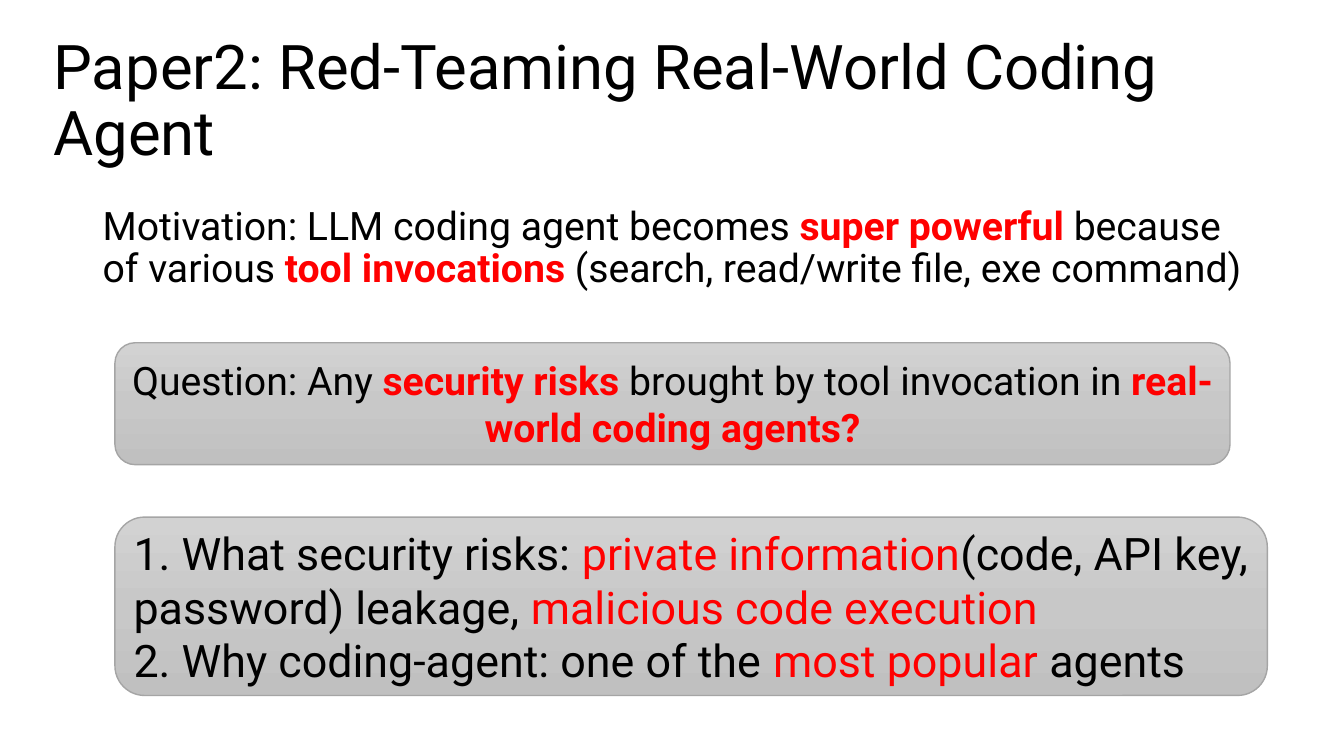
from copy import deepcopy
from dataclasses import dataclass

from pptx import Presentation
from pptx import util as u
from pptx.dml import color
from pptx.enum import shapes, text

PX = 9144  # EMU per px, 100 px to the inch


@dataclass(frozen=True)
class Theme:
    font: str = "Roboto"
    ink: str = "000000"
    hot: str = "FF0000"
    edge: str = "A5A5A5"
    grey: tuple = ((0, "D2D2D2"), (0.5, "C8C8C8"), (1, "C0C0C0"))
    head: int = 44
    body: int = 28
    large: int = 32


def rgb(code):
    return color.RGBColor.from_string(code)


class Deck:
    def __init__(self, theme, wide, high):
        self.theme = theme
        self.prs = Presentation()
        self.prs.slide_width, self.prs.slide_height = wide * PX, high * PX
        self.slide = self.prs.slides.add_slide(self.prs.slide_layouts[5])

    def label(self, shape, paras, size, align=text.PP_ALIGN.LEFT,
              anchor=text.MSO_ANCHOR.MIDDLE, space=1.0):
        """Each paragraph is a list of (words, hot, bold) runs."""
        frame = shape.text_frame
        frame.word_wrap = True
        frame.auto_size = text.MSO_AUTO_SIZE.NONE
        frame.vertical_anchor = anchor
        for i, runs in enumerate(paras):
            para = frame.add_paragraph() if i else frame.paragraphs[0]
            para.alignment, para.line_spacing = align, space
            for words, hot, heavy in runs:
                run = para.add_run()
                run.text = words
                font = run.font
                font.name, font.size, font.bold = self.theme.font, u.Pt(size), heavy
                font.color.rgb = rgb(self.theme.hot if hot else self.theme.ink)

    def title(self, box, words):
        head = self.slide.shapes.title
        head.left, head.top, head.width, head.height = (n * PX for n in box)
        self.label(head, [[plain(words)]], self.theme.head, space=0.9)

    def note(self, box, paras):
        shape = self.slide.shapes.add_textbox(*(n * PX for n in box))
        self.label(shape, paras, self.theme.body,
                   anchor=text.MSO_ANCHOR.TOP, space=0.9)

    def panel(self, box, paras, size, align=text.PP_ALIGN.LEFT):
        shape = self.slide.shapes.add_shape(
            shapes.MSO_SHAPE.ROUNDED_RECTANGLE, *(n * PX for n in box))
        shape.shadow.inherit = False
        shape.line.color.rgb = rgb(self.theme.edge)
        shape.line.width = u.Pt(1)
        self.shade(shape)
        self.label(shape, paras, size, align)

    def shade(self, shape):
        fill = shape.fill
        fill.gradient()
        fill.gradient_angle = 270  # light at the top
        # The default gradient has two stops; add the middle one
        first = shape.element.spPr.gradFill.gsLst[0]
        first.addnext(deepcopy(first))
        for stop, (place, code) in zip(fill.gradient_stops, self.theme.grey):
            stop.position = place
            stop.color.rgb = rgb(code)


def plain(words):
    return words, False, False


def red(words):
    return words, True, False


def bold(words):
    return words, True, True


def main():
    theme = Theme()
    deck = Deck(theme, 1333, 750)

    # Title and motivation
    deck.title((43, 29, 1225, 145), "Paper2: Red-Teaming Real-World Coding Agent")
    deck.note((92, 200, 1150, 476), [[
        plain("Motivation: LLM coding agent becomes "),
        bold("super powerful "),
        plain("because of various "),
        bold("tool invocations "),
        plain("(search, read/write file, exe command)"),
    ]])

    # Question
    deck.panel((114, 340, 1106, 121), [[
        plain("Question: Any "),
        bold("security risks "),
        plain("brought by tool invocation in "),
        bold("real-world coding agents?"),
    ]], theme.body, text.PP_ALIGN.CENTER)

    # Answers
    deck.panel((114, 513, 1143, 177), [
        [
            plain("1. What security risks: "),
            red("private information"),
            plain("(code, API key, password) leakage, "),
            red("malicious code execution"),
        ],
        [
            plain("2. Why coding-agent: one of the "),
            red("most popular"),
            plain(" agents"),
        ],
    ], theme.large)

    deck.prs.save("out.pptx")


if __name__ == "__main__":
    main()
